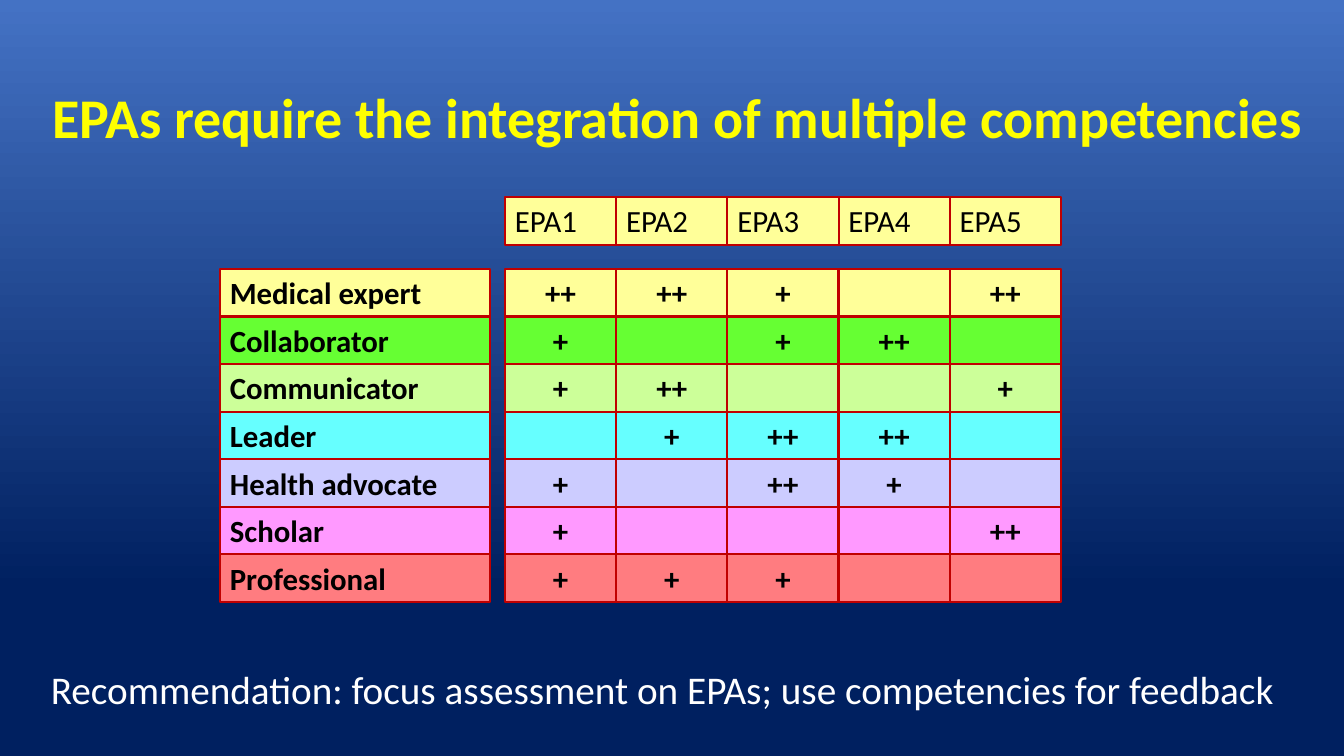
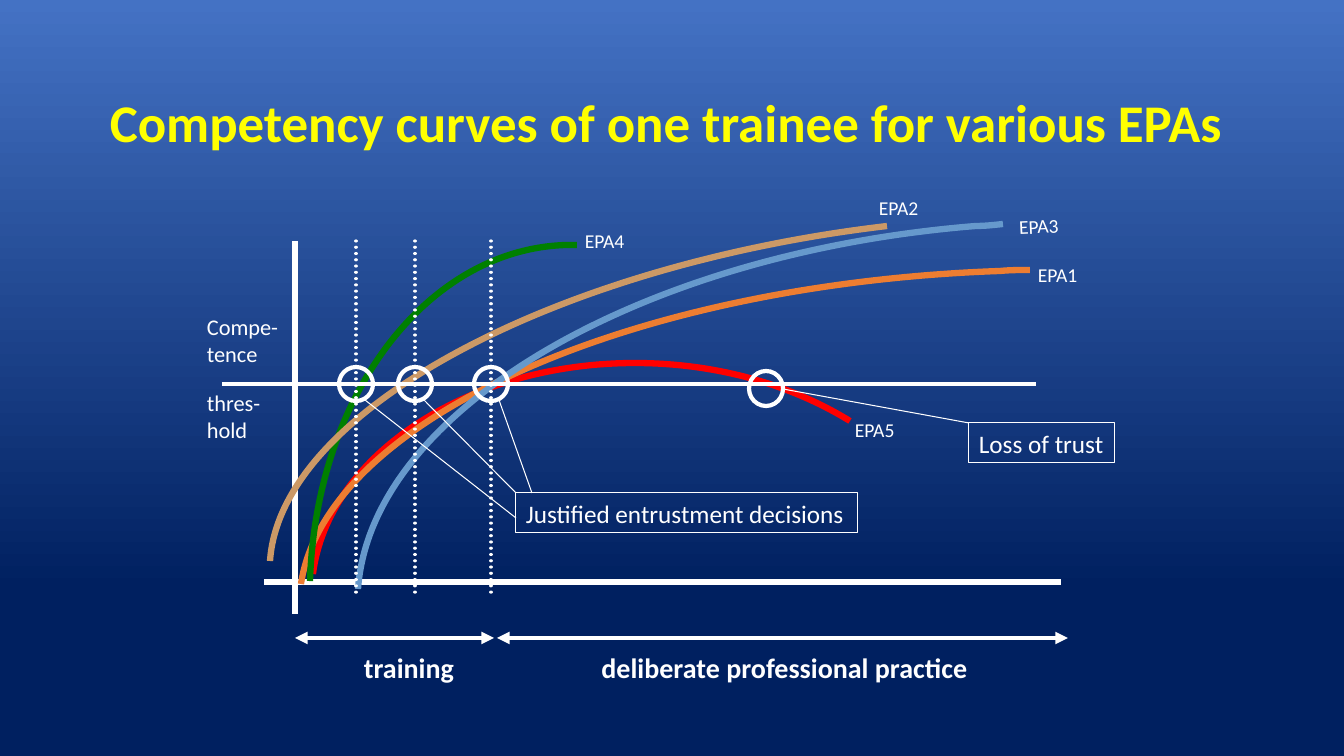
from lxml import etree
from pptx import Presentation
from pptx import util as u
from pptx.dml.color import RGBColor
from pptx.enum import dml, shapes, text
from pptx.oxml import ns

PX = 9144000 / 1008  # EMU in one px
FONT = "Calibri"
COLOURS = {name: RGBColor.from_string(value) for name, value in {
    "sky": "4472C4", "navy": "002060", "title": "FFFF00", "white": "FFFFFF",
    "black": "000000", "border": "C00000",
    "yellow": "FFFF99", "lime": "66FF33", "pale green": "CCFF99", "cyan": "66FFFF",
    "lilac": "CCCCFF", "pink": "FF99FF", "coral": "FF7C80",
    "red": "FF0000", "orange": "ED7D31", "green": "008000", "tan": "CC9966",
    "steel": "6699CC",
}.items()}
LEFT, CENTER = text.PP_ALIGN.LEFT, text.PP_ALIGN.CENTER
TOP, MIDDLE, BOTTOM = text.MSO_ANCHOR.TOP, text.MSO_ANCHOR.MIDDLE, text.MSO_ANCHOR.BOTTOM


def add_text(s, box, words, size, colour="white", bold=False, align=LEFT, anchor=TOP,
             wrap=True, fill=None, border=None):
    """Add a text box, or a rectangle if border gives a (colour, points) pair."""
    frame = [round(v * PX) for v in box]
    if border:
        sp = s.shapes.add_shape(shapes.MSO_SHAPE.RECTANGLE, *frame)
        sp.shadow.inherit = False
        sp.line.color.rgb, sp.line.width = COLOURS[border[0]], u.Pt(border[1])
        if fill:
            sp.fill.solid()
            sp.fill.fore_color.rgb = COLOURS[fill]
        else:
            sp.fill.background()
    else:
        sp = s.shapes.add_textbox(*frame)
    tf = sp.text_frame
    tf.word_wrap = wrap
    tf.vertical_anchor = anchor
    if words:
        tf.text = words
        for p in tf.paragraphs:
            p.alignment = align
            p.font.name, p.font.size, p.font.bold = FONT, u.Pt(size), bold
            p.font.color.rgb = COLOURS[colour]
    return sp


def add_line(s, ends, width, dotted=False, arrows=False):
    line = s.shapes.add_connector(shapes.MSO_CONNECTOR.STRAIGHT, *[round(v * PX) for v in ends])
    etree.SubElement(line._element.spPr, ns.qn("a:effectLst"))
    line.line.color.rgb = COLOURS["white"]
    line.line.width = u.Pt(width)
    ln = line.line._get_or_add_ln()
    if dotted:
        line.line.dash_style = dml.MSO_LINE.ROUND_DOT
        ln.set("cap", "rnd")
    if arrows:
        for tag in ("a:headEnd", "a:tailEnd"):
            etree.SubElement(ln, ns.qn(tag), type="triangle")


prs = Presentation()
prs.slide_width, prs.slide_height = round(1344 * PX), round(756 * PX)

fill = prs.slide_master.background.fill
fill.gradient()
fill.gradient_angle = 270
for stop, colour, position in zip(fill.gradient_stops, ("sky", "navy"), (0, 0.78)):
    stop.color.rgb = COLOURS[colour]
    stop.position = position

# Slide 1: competencies by EPA
s = prs.slides.add_slide(prs.slide_layouts[6])

competencies = [
    ("Medical expert", "yellow", ["++", "++", "+", "", "++"]),
    ("Collaborator", "lime", ["+", "", "+", "++", ""]),
    ("Communicator", "pale green", ["+", "++", "", "", "+"]),
    ("Leader", "cyan", ["", "+", "++", "++", ""]),
    ("Health advocate", "lilac", ["+", "", "++", "+", ""]),
    ("Scholar", "pink", ["+", "", "", "", "++"]),
    ("Professional", "coral", ["+", "+", "+", "", ""]),
]
EDGE = ("border", 1.5)
GRID_LEFT, GRID_TOP = 505, 269
CELL_W, CELL_H = 556 / 5, 333 / 7
columns = [GRID_LEFT + j * CELL_W for j in range(5)]
for i, (name, colour, marks) in enumerate(competencies):
    y = GRID_TOP + i * CELL_H
    add_text(s, (220, y, 270, CELL_H), name, 22, "black", True, fill=colour, border=EDGE)
    for x, mark in zip(columns, marks):
        add_text(s, (x, y, CELL_W, CELL_H), mark, 22, "black", True, CENTER,
                 fill=colour, border=EDGE)
for j, x in enumerate(columns):
    width = 143 if j < 4 else CELL_W
    add_text(s, (x, 197, width, 48), f"EPA{j + 1}", 22, "black", fill="yellow", border=EDGE)

add_text(s, (41, 660, 1272, 57),
         "Recommendation: focus assessment on EPAs; use competencies for feedback", 28)
add_text(s, (34, 48, 1286, 136), "EPAs require the integration of multiple competencies",
         40, "title", True, CENTER, MIDDLE)

# Slide 2: competency curves
s = prs.slides.add_slide(prs.slide_layouts[6])
sp = add_text(s, (75, 28, 1182, 126), "Competency curves of one trainee for various EPAs",
              37.8, "title", True, CENTER, BOTTOM)
tf = sp.text_frame
tf.margin_left = tf.margin_right = tf.margin_bottom = 0
tf.paragraphs[0].line_spacing = 0.9

for phase, box, x1, x2 in [("training", (287, 646, 244, 43), 295, 494),
                           ("deliberate professional practice", (510, 646, 549, 43), 497, 1068)]:
    add_text(s, box, phase, 20, bold=True, align=CENTER)
    add_line(s, (x1, 638, x2, 638), 3, arrows=True)
add_line(s, (264, 582, 1061, 582), 4.5)
add_line(s, (295, 241, 295, 614), 4.5)

# Each curve: label, label position and rotation, colour, start, then three points a segment
curves = [
    ("EPA5", (845, 413), 0, "red",
     [(313, 574), (328, 455), (468, 363), (635, 363), (715, 363), (790, 384), (850, 421)]),
    ("EPA1", (1028, 258), 0, "orange",
     [(301, 584), (326, 420), (630, 284), (1000, 271), (1010, 270), (1020, 270), (1030, 270)]),
    ("EPA4", (575, 224), 0, "green",
     [(310, 581), (316, 396), (426, 250), (565, 245), (569, 245), (573, 245), (577, 245)]),
    ("EPA2", (869, 191), 0, "tan",
     [(270, 561), (280, 411), (555, 265), (887, 226)]),
    ("EPA3", (1009, 209), -2.6, "steel",
     [(358, 589), (371, 410), (640, 253), (976, 226), (985, 226), (994, 225), (1003, 224)]),
]
for name, (x, y), rotation, colour, points in curves:
    points = [(round(px * PX), round(py * PX)) for px, py in points]
    builder = s.shapes.build_freeform(*points[0])
    builder.add_line_segments(points[1:], close=False)
    curve = builder.convert_to_shape()
    steps = list(curve._element.iter(ns.qn("a:lnTo")))
    outline = steps[0].getparent()
    for k in range(0, len(steps), 3):
        bezier = etree.SubElement(outline, ns.qn("a:cubicBezTo"))
        for step in steps[k:k + 3]:
            bezier.append(step[0])
            outline.remove(step)
    curve.shadow.inherit = False
    curve.fill.background()
    curve.line.color.rgb = COLOURS[colour]
    curve.line.width = u.Pt(4.5)
    add_text(s, (x, y, 60, 34), name, 14, wrap=False).rotation = rotation

add_line(s, (222, 384, 1036, 384), 2.25)
add_text(s, (197, 308, 93, 65), "Compe-\ntence", 16, wrap=False)
add_text(s, (197, 384, 75, 65), "thres-\nhold", 16, wrap=False)

decisions = (356, 415, 491)
for x in decisions:
    add_line(s, (x, 241, x, 594), 2.25, dotted=True)

circles = [(x - 17, 367, 34, 34) for x in decisions] + [(749, 371, 34, 35)]
for box in circles:
    sp = s.shapes.add_shape(shapes.MSO_SHAPE.OVAL, *[round(v * PX) for v in box])
    sp.shadow.inherit = False
    sp.fill.background()
    sp.line.color.rgb = COLOURS["white"]
    sp.line.width = u.Pt(3)

for box, words in [((516, 493, 342, 40), "Justified entrustment decisions"),
                   ((969, 423, 146, 40), "Loss of trust")]:
    add_text(s, box, words, 18, wrap=False, border=("white", 0.75))

for ends in [(499, 400, 532, 493), (424, 400, 516, 493), (365, 400, 516, 518),
             (783, 389, 969, 423)]:
    add_line(s, ends, 0.75)

prs.save("out.pptx")
